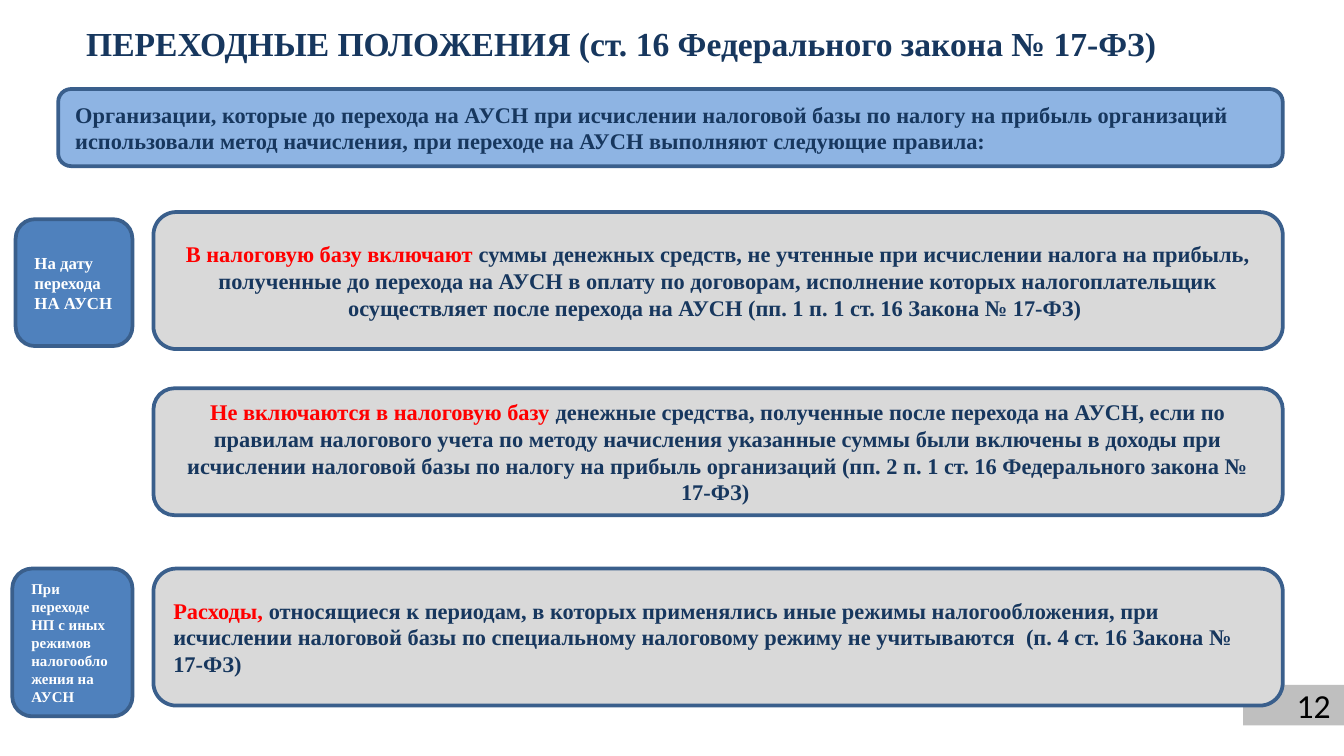
from pptx import Presentation
from pptx.dml.color import RGBColor as RGB
from pptx.enum.shapes import MSO_SHAPE as Shape
from pptx.enum.text import MSO_ANCHOR as Anchor, PP_ALIGN as Align
from pptx.util import Pt

HUES = {"navy": "17375E", "red": "FF0000", "white": "FFFFFF", "black": "000000",
        "gray": "D9D9D9", "sky": "8EB4E3", "blue": "4F81BD", "edge": "3A5F8C",
        "tab": "BFBFBF"}
SERIF = "Times New Roman"


def write(shape, runs, size, align=Align.LEFT, face=SERIF, bold=True):
    frame = shape.text_frame
    frame.word_wrap = True
    frame.vertical_anchor = Anchor.MIDDLE
    para = frame.paragraphs[0]
    para.alignment = align
    form = {"name": face, "size": Pt(size), "bold": bold}
    for text, hue in runs:
        run = para.add_run()
        run.text = text
        for key, value in form.items():
            setattr(run.font, key, value)
        run.font.color.rgb = RGB.from_string(HUES[hue])


def block(kind, box, fill, edge=None):
    shape = slide.shapes.add_shape(kind, *[Pt(n) for n in box])
    shape.shadow.inherit = False
    shape.fill.solid()
    shape.fill.fore_color.rgb = RGB.from_string(HUES[fill])
    if edge:
        shape.line.color.rgb = RGB.from_string(HUES[edge])
        shape.line.width = Pt(2)
    else:
        shape.line.fill.background()
    return shape


deck = Presentation()
deck.slide_width, deck.slide_height = Pt(720), Pt(405)
slide = deck.slides.add_slide(deck.slide_layouts[5])

# Title
title = slide.shapes.title
place = {"left": 39, "top": 8.8, "width": 628, "height": 29}
for key, value in place.items():
    setattr(title, key, Pt(value))
write(title, [("ПЕРЕХОДНЫЕ ПОЛОЖЕНИЯ (ст. 16 Федерального закона № 17-ФЗ)", "navy")], 18)

# Page number
page = block(Shape.RECTANGLE, (666, 367, 54, 21.6), "tab")
write(page, [("12", "black")], 18, Align.RIGHT, "Calibri", False)

# Rules: top, height, alignment, lead words, rest
rules = [
    (113.6, 73.4, Align.CENTER, "В налоговую базу включают ",
     "суммы денежных средств, не учтенные при исчислении налога на прибыль, "
     "полученные до перехода на АУСН в оплату по договорам, исполнение которых "
     "налогоплательщик осуществляет после перехода на АУСН "
     "(пп. 1 п. 1 ст. 16 Закона № 17-ФЗ) "),
    (208, 68, Align.CENTER, "Не включаются в налоговую базу ",
     "денежные средства, полученные после перехода на АУСН, если по правилам "
     "налогового учета по методу начисления указанные суммы были включены в доходы "
     "при исчислении налоговой базы по налогу на прибыль организаций "
     "(пп. 2 п. 1 ст. 16 Федерального закона № 17-ФЗ) "),
    (304.6, 73.4, Align.LEFT, "Расходы, ",
     "относящиеся к периодам, в которых применялись иные режимы налогообложения, "
     "при исчислении налоговой базы по специальному налоговому режиму "
     "не учитываются  (п. 4 ст. 16 Закона № 17-ФЗ)"),
]
for top, high, align, lead, rest in rules:
    card = block(Shape.ROUNDED_RECTANGLE, (82.2, top, 605, high), "gray", "edge")
    write(card, [(lead, "red"), (rest, "navy")], 12, align)

# Intro bar and side labels: box, fill, ink, size, text
notes = [
    ((31.2, 47.7, 656, 41.3), "sky", "navy", 12,
     "Организации, которые до перехода на АУСН при исчислении налоговой базы по "
     "налогу на прибыль организаций использовали метод начисления, при переходе "
     "на АУСН выполняют следующие правила:"),
    ((8.4, 117.4, 62.6, 68), "blue", "white", 9, "На дату перехода НА АУСН"),
    ((6.6, 304.6, 64.4, 79.2), "blue", "white", 8,
     "При переходе НП с иных режимов налогообложения на АУСН"),
]
for box, fill, ink, size, text in notes:
    note = block(Shape.ROUNDED_RECTANGLE, box, fill, "edge")
    write(note, [(text, ink)], size)

deck.save("out.pptx")
